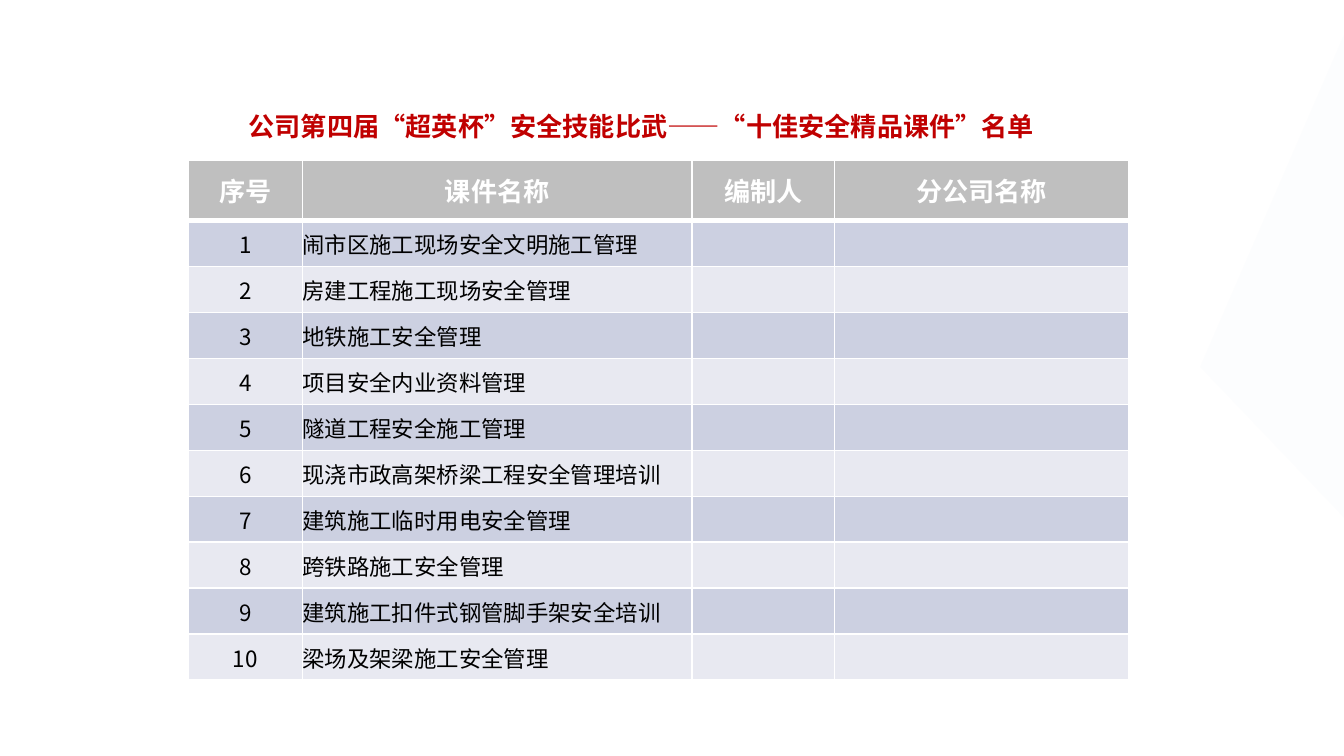
from lxml.etree import SubElement as Sub
from pptx import Presentation
from pptx.dml.color import RGBColor as Rgb
from pptx.enum.text import MSO_ANCHOR as Anchor, MSO_AUTO_SIZE as Fit, PP_ALIGN as Align
from pptx.oxml.ns import qn
from pptx.util import Inches, Pt

FONT = "Noto Sans CJK SC"
HUES = {
    "title": "C00000",
    "head": "BFBFBF",
    "odd": "CCD0E1",
    "even": "E8E9F1",
    "line": "FFFFFF",
    "text": "000000",
    "decor": "EAEFF6",
}
TITLE = "公司第四届“超英杯”安全技能比武——“十佳安全精品课件”名单"
HEADS = ["序号", "课件名称", "编制人", "分公司名称"]
NAMES = [
    "闹市区施工现场安全文明施工管理",
    "房建工程施工现场安全管理",
    "地铁施工安全管理",
    "项目安全内业资料管理",
    "隧道工程安全施工管理",
    "现浇市政高架桥梁工程安全管理培训",
    "建筑施工临时用电安全管理",
    "跨铁路施工安全管理",
    "建筑施工扣件式钢管脚手架安全培训",
    "梁场及架梁施工安全管理",
]
WIDTHS = [0.85, 2.9, 1.06, 2.19]
HEAD_H, ROW_H = 0.45, 0.32
BOLD = {"name": FONT, "size": Pt(14), "bold": True}
PLAIN = {"name": FONT, "size": Pt(12), "bold": False}
FLUSH = {"margin_left": 0, "margin_right": 0, "margin_top": 0, "margin_bottom": 0}


def apply(item, style):
    for key, value in style.items():
        setattr(item, key, value)


def hue(name):
    return Rgb.from_string(HUES[name])


def write(frame, text, style, color, align):
    para = frame.paragraphs[0]
    para.alignment = align
    if not text:
        Sub(para._p, qn("a:endParaRPr"), sz=str(int(style["size"].pt * 100)))
        return
    run = para.add_run()
    run.text = text
    apply(run.font, style)
    run.font.color.rgb = hue(color)
    Sub(run._r.get_or_add_rPr(), qn("a:ea"), typeface=FONT)


def border(cell, top, bottom):
    props = cell._tc.get_or_add_tcPr()
    for side, width in {"L": 1, "R": 1, "T": top, "B": bottom}.items():
        line = Sub(props, qn(f"a:ln{side}"), w=str(Pt(width)))
        fill = Sub(line, qn("a:solidFill"))
        Sub(fill, qn("a:srgbClr"), val=HUES["line"])


def paint(cell, color, top=1, bottom=1):
    border(cell, top, bottom)
    cell.fill.solid()
    cell.fill.fore_color.rgb = hue(color)
    cell.vertical_anchor = Anchor.MIDDLE


def add_decor(slide):
    pen = slide.shapes.build_freeform(Inches(10), Inches(0.26))
    pen.add_line_segments([(Inches(10), Inches(3.85)), (Inches(8.93), Inches(2.73))])
    shape = pen.convert_to_shape()
    shape.shadow.inherit = False
    shape.line.fill.background()
    shape.fill.solid()
    shape.fill.fore_color.rgb = hue("decor")
    tint = shape._element.spPr.find(".//" + qn("a:srgbClr"))
    Sub(tint, qn("a:alpha"), val="10000")


def add_title(slide):
    title = slide.shapes.title
    apply(title, {"left": Inches(1.75), "top": Inches(0.77),
                  "width": Inches(6.25), "height": Inches(0.34)})
    frame = title.text_frame
    apply(frame, {"word_wrap": True, "auto_size": Fit.NONE, "vertical_anchor": Anchor.TOP})
    write(frame, TITLE, BOLD, "title", Align.LEFT)


def add_list(slide):
    count = len(NAMES)
    table = slide.shapes.add_table(
        count + 1, len(HEADS), Inches(1.4), Inches(1.19),
        Inches(sum(WIDTHS)), Inches(HEAD_H + count * ROW_H)).table
    for col, width in zip(table.columns, WIDTHS):
        col.width = Inches(width)
    for num, row in enumerate(table.rows):
        row.height = Inches(ROW_H if num else HEAD_H)
    for col, head in enumerate(HEADS):
        cell = table.cell(0, col)
        paint(cell, "head", bottom=3)
        write(cell.text_frame, head, BOLD, "line", Align.CENTER)
    for num, name in enumerate(NAMES, 1):
        for col, text in enumerate([str(num), name, "", ""]):
            cell = table.cell(num, col)
            paint(cell, "odd" if num % 2 else "even", top=3 if num == 1 else 1)
            if col == 1:
                apply(cell, FLUSH)
            write(cell.text_frame, text, PLAIN, "text",
                  Align.LEFT if col == 1 else Align.CENTER)


def main():
    deck = Presentation()
    deck.slide_width = Inches(10)
    deck.slide_height = Inches(10 * 9 / 16)
    slide = deck.slides.add_slide(deck.slide_layouts[5])
    add_decor(slide)
    add_list(slide)
    add_title(slide)
    deck.save("out.pptx")


if __name__ == "__main__":
    main()
